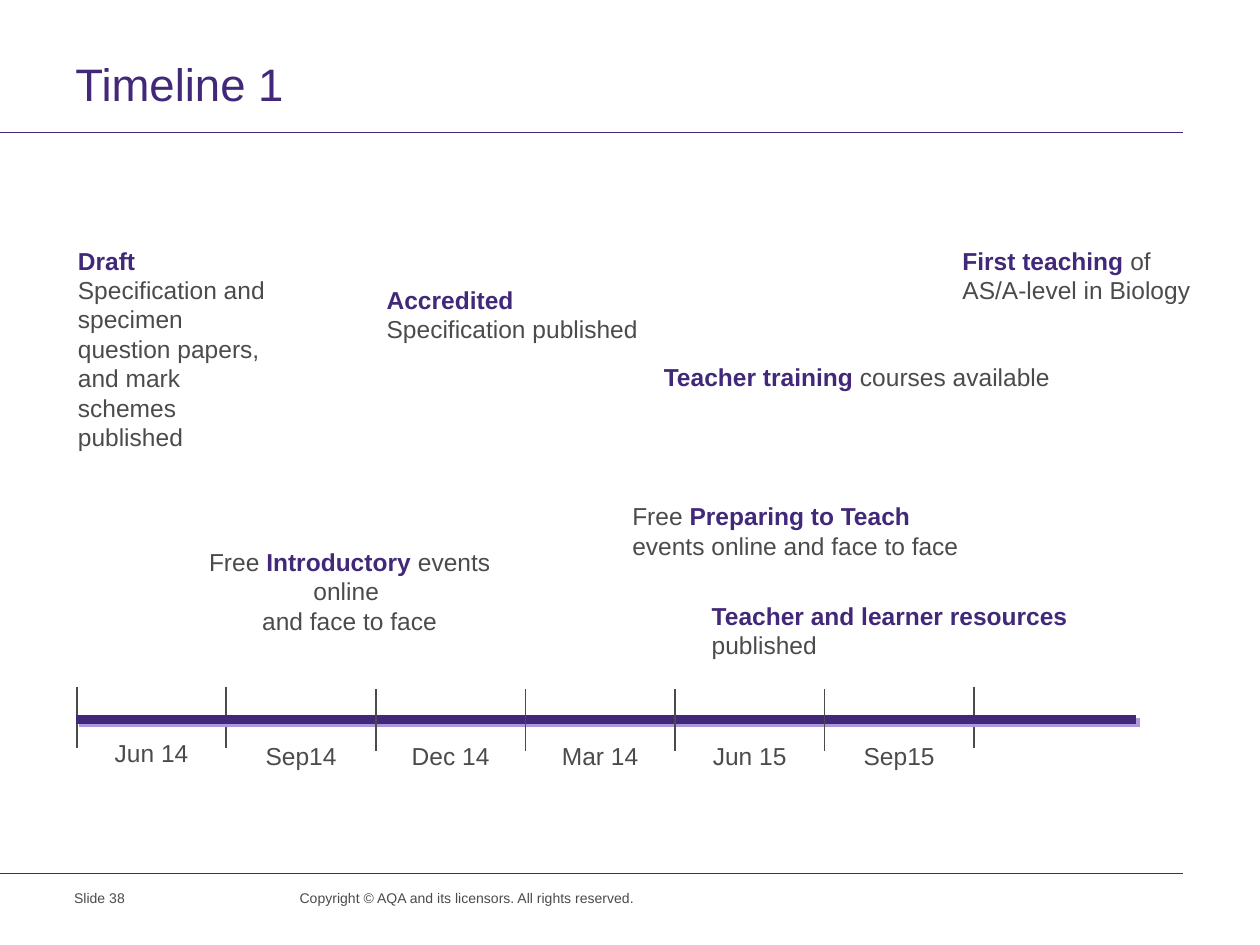
from typing import NamedTuple

from lxml.etree import SubElement
from pptx import Presentation
from pptx.dml.color import RGBColor
from pptx.enum.shapes import MSO_CONNECTOR
from pptx.enum.text import PP_ALIGN as Align
from pptx.oxml.ns import qn
from pptx.util import Inches, Pt

PURPLE = RGBColor(0x41, 0x28, 0x78)
LILAC = RGBColor(0xAC, 0x96, 0xDC)
GREY = RGBColor(0x4B, 0x4B, 0x4B)
FONT = "Arial"
WIDTH, HEIGHT = Inches(10), Inches(7.5)

FIRST_TICK, LAST_TICK = 6.1, 77.3
MONTHS = ["Jun 14", "Sep14", "Dec 14", "Mar 14", "Jun 15", "Sep15"]
PITCH = (LAST_TICK - FIRST_TICK) / len(MONTHS)
TICK_TOP, TICK_HEIGHT = 72.93, 6.5
LABEL_TOP, LABEL_HEIGHT = 77.73, 4.4
LIFT = 0.27
LIFTED_TICKS = [0, 1, 6]
LEVEL_TICKS = [2, 3, 4, 5]


class Box(NamedTuple):
    left: float
    top: float
    width: float
    height: float


class Span(NamedTuple):
    text: str
    strong: bool = False


class Note(NamedTuple):
    box: Box
    paragraphs: list[list[Span]]
    align: Align = Align.LEFT
    size: float = 14


def plain(text: str) -> list[list[Span]]:
    return [[Span(text)]]


NOTES = [
    Note(Box(4.9, 93.47, 15.6, 5.07), plain("Slide 38"), size=8),
    Note(Box(22.8, 93.47, 29.3, 3.47),
         plain("Copyright © AQA and its licensors. All rights reserved."), size=8),
    Note(Box(5.2, 25.33, 17.7, 23.33),
         [[Span("Draft ", True),
           Span("Specification and specimen question papers, and mark schemes published")]]),
    Note(Box(29.7, 29.47, 22.1, 7.6),
         [[Span("Accredited ", True), Span("Specification published")]]),
    Note(Box(75.4, 25.33, 21.4, 12.4),
         [[Span("First teaching ", True), Span("of AS/A-level in Biology")]]),
    Note(Box(51.7, 37.6, 35.5, 4.53),
         [[Span("Teacher training ", True), Span("courses available")]]),
    Note(Box(49.2, 52.4, 29, 7.6),
         [[Span("Free"), Span(" Preparing to Teach ", True),
           Span("events online and face to face")]]),
    Note(Box(15.5, 57.2, 24.5, 15.47),
         [[Span("Free"), Span(" Introductory ", True), Span("events online ")],
          [Span("and face to face")]], Align.CENTER),
    Note(Box(55.5, 62.93, 36.2, 7.6),
         [[Span("Teacher and learner resources ", True), Span("published")]]),
]


def across(percent: float) -> int:
    return round(WIDTH * percent / 100)


def down(percent: float) -> int:
    return round(HEIGHT * percent / 100)


def add_box(slide, box: Box):
    shape = slide.shapes.add_textbox(
        across(box.left), down(box.top), across(box.width), down(box.height))
    shape.text_frame.word_wrap = True
    return shape.text_frame


def add_note(slide, note: Note) -> None:
    text_frame = add_box(slide, note.box)
    for index, spans in enumerate(note.paragraphs):
        paragraph = text_frame.add_paragraph() if index else text_frame.paragraphs[0]
        paragraph.alignment = note.align
        for span in spans:
            run = paragraph.add_run()
            run.text = span.text
            run.font.name = FONT
            run.font.size = Pt(note.size)
            run.font.bold = span.strong
            run.font.color.rgb = PURPLE if span.strong else GREY


def add_title(slide, text: str) -> None:
    text_frame = add_box(slide, Box(5, 5.87, 95, 6.4))
    text_frame.text = text
    paragraph = text_frame.paragraphs[0]
    paragraph.line_spacing = Pt(28)
    font = paragraph.runs[0].font
    font.name = FONT
    font.size = Pt(26)
    font.color.rgb = PURPLE


def add_line(slide, start: tuple[float, float], end: tuple[float, float],
             color: RGBColor, weight: float, shadow: RGBColor | None = None) -> None:
    line = slide.shapes.add_connector(
        MSO_CONNECTOR.STRAIGHT,
        across(start[0]), down(start[1]), across(end[0]), down(end[1]))
    line.line.color.rgb = color
    line.line.width = Pt(weight)
    effects = SubElement(line._element.spPr, qn("a:effectLst"))
    if shadow is not None:
        outer = SubElement(effects, qn("a:outerShdw"), dist=str(Pt(2.8)),
                           dir=str(45 * 60000), algn="ctr", rotWithShape="0")
        SubElement(outer, qn("a:srgbClr"), val=str(shadow))


def add_ticks(slide, columns: list[int], top: float) -> None:
    for column in columns:
        left = FIRST_TICK + column * PITCH
        add_line(slide, (left, top), (left, top + TICK_HEIGHT), GREY, 1)


def add_timeline(slide) -> None:
    add_ticks(slide, LIFTED_TICKS, TICK_TOP - LIFT)
    add_line(slide, (6, 76.13), (90.2, 76.13), PURPLE, 5, LILAC)
    add_ticks(slide, LEVEL_TICKS, TICK_TOP)
    for column, month in enumerate(MONTHS):
        top = LABEL_TOP if column else LABEL_TOP - LIFT
        box = Box(FIRST_TICK + column * PITCH, top, PITCH, LABEL_HEIGHT)
        add_note(slide, Note(box, plain(month), Align.CENTER))


def main() -> None:
    presentation = Presentation()
    presentation.slide_width, presentation.slide_height = WIDTH, HEIGHT
    slide = presentation.slides.add_slide(presentation.slide_layouts[6])
    for rule_top in (14, 92.4):
        add_line(slide, (0, rule_top), (93.9, rule_top), PURPLE, 0.6)
    add_title(slide, "Timeline 1")
    for note in NOTES:
        add_note(slide, note)
    add_timeline(slide)
    presentation.save("out.pptx")


if __name__ == "__main__":
    main()
